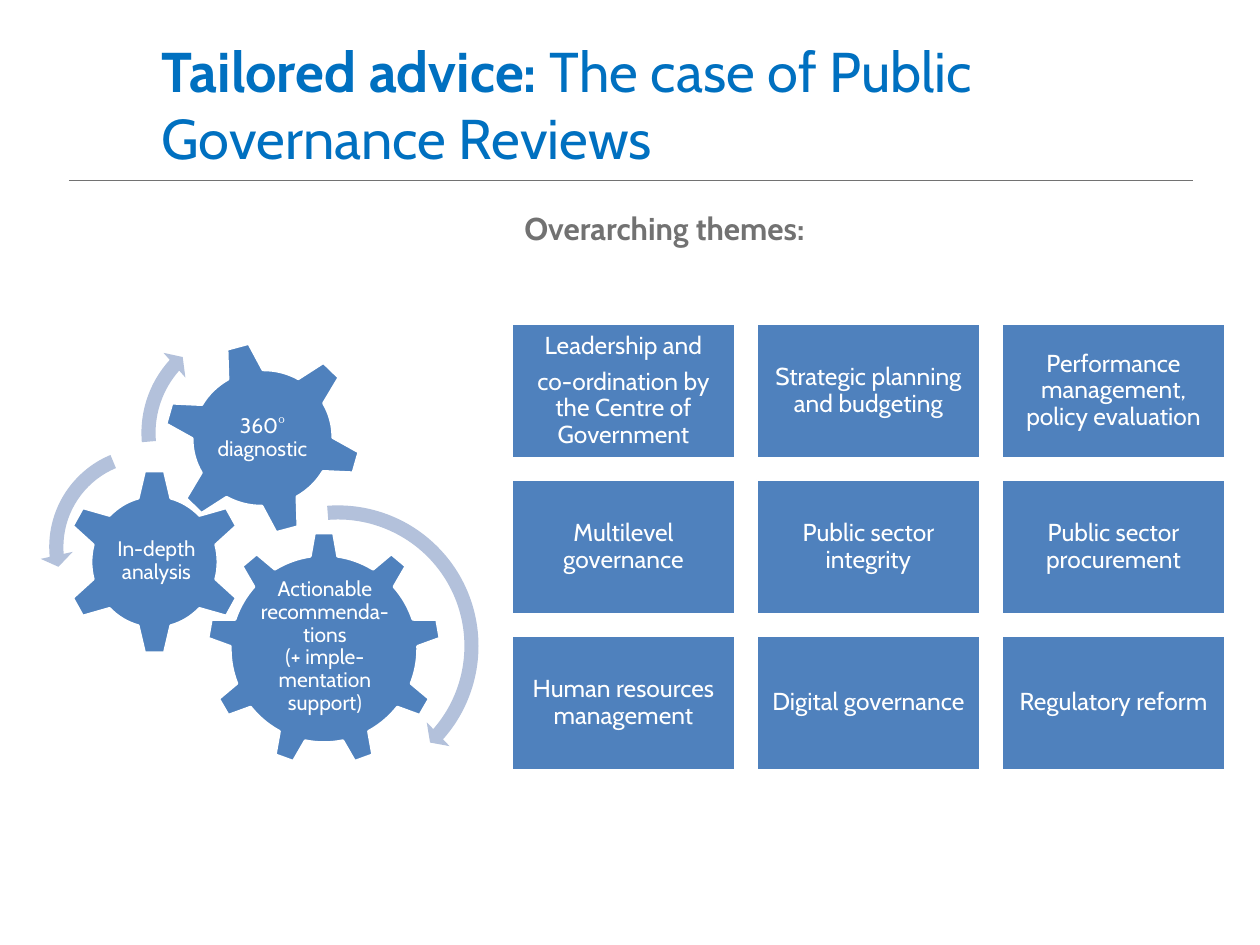
from lxml import etree
from pptx import Presentation, util as u
from pptx.dml.color import RGBColor
from pptx.enum import shapes, text
from pptx.oxml.ns import qn

COLORS = {
    "title": "0070C0",
    "grey": "727272",
    "blue": "4F81BD",
    "pale": "B3C1DB",
    "white": "FFFFFF",
}
FONT = "Cabin"
PRESET = shapes.MSO_SHAPE
THEMES = [
    "Leadership and\nco-ordination by the Centre of Government",
    "Strategic planning and budgeting",
    "Performance management, policy evaluation",
    "Multilevel governance",
    "Public sector integrity",
    "Public sector procurement",
    "Human resources management",
    "Digital governance",
    "Regulatory reform",
]
GEARS = [
    (PRESET.GEAR_9, (167, 217, 234, 234), 0, (215, 271, 140, 121),
     "Actionable recommenda-\vtions\v(+ imple- mentation support)"),
    (PRESET.GEAR_6, (24, 154, 181, 186), 0, (71, 200, 91, 92), "In-depth analysis"),
    (PRESET.GEAR_6, (123, 26, 199, 194), 345, (167, 68, 111, 110), "360° diagnostic"),
]
ARROWS = [
    (PRESET.CIRCULAR_ARROW, (148, 181, 300, 300), (0.047, 2.99, 24.827, 159.354, 0.055)),
    (PRESET.LEFT_CIRCULAR_ARROW, (0, 123, 218, 218), (0.065, 4.3, 104.891, 148.378, 0.075)),
    (PRESET.CIRCULAR_ARROW, (92, 0, 236, 236), (0.06, 3.941, 133.138, 105.082, 0.07)),
]


def px(length):
    """Turn pixels into EMU at 126 to the inch."""
    return u.Emu(round(length * 914400 / 126))


def place(box, left, top):
    """Return a box in EMU, moved by the corner of its region."""
    return [px(n) for n in (box[0] + left, box[1] + top, box[2], box[3])]


def color(name):
    """Look up a colour by name."""
    return RGBColor.from_string(COLORS[name])


def write(frame, words, size, ink="white", lead="", bold=False, align="CENTER",
          anchor="MIDDLE", inset=None, spacing=0.9):
    """Fill a text frame, one paragraph a line, after an optional bold lead."""
    frame.word_wrap = True
    frame.auto_size = text.MSO_AUTO_SIZE.NONE
    frame.vertical_anchor = getattr(text.MSO_ANCHOR, anchor)
    if inset is not None:
        frame.margin_left = frame.margin_right = px(inset)
        frame.margin_top = frame.margin_bottom = px(inset)
    for index, line in enumerate(words.split("\n")):
        paragraph = frame.add_paragraph() if index else frame.paragraphs[0]
        paragraph.text = lead or line
        if lead:
            paragraph.add_run().text = line
        paragraph.alignment = getattr(text.PP_ALIGN, align)
        paragraph.line_spacing = spacing
        paragraph.space_before = u.Pt(5 if index else 0)
        for number, run in enumerate(paragraph.runs):
            run.font.name = FONT
            run.font.size = u.Pt(size)
            run.font.bold = bold or bool(lead and number == 0)
            run.font.color.rgb = color(ink)
        for line_break in paragraph._p.findall(qn("a:br")):
            etree.SubElement(line_break, qn("a:rPr"), sz=str(size * 100))


def add_solid(slide, preset, box, fill, outlined=True):
    """Add a filled preset shape, with a white outline if asked."""
    solid = slide.shapes.add_shape(preset, *box)
    solid.shadow.inherit = False
    solid.fill.solid()
    solid.fill.fore_color.rgb = color(fill)
    if outlined:
        solid.line.color.rgb = color("white")
        solid.line.width = u.Pt(1.5)
    else:
        solid.line.fill.background()
    return solid


def add_header(slide, left, top, width, height):
    """Set the title and draw the rule below it."""
    title = slide.shapes.title
    title.left, title.top, title.width, title.height = place(
        (80, 0, width - 102, height - 6), left, top)
    write(title.text_frame, "The case of Public Governance Reviews", 32, ink="title",
          lead="Tailored advice: ", align="LEFT", spacing=1.0)
    rule_y = px(top + height)
    rule = slide.shapes.add_connector(
        shapes.MSO_CONNECTOR.STRAIGHT, px(left), rule_y, px(left + width), rule_y)
    rule.line.color.rgb = color("grey")
    rule.line.width = u.Pt(0.5)
    etree.SubElement(rule._element.spPr, qn("a:effectLst"))


def add_gears(slide, left, top):
    """Draw the three meshed gears and their turning arrows."""
    for preset, box, turn, label_box, label in GEARS:
        gear = add_solid(slide, preset, place(box, left, top), "blue")
        gear.rotation = turn
        caption = slide.shapes.add_textbox(*place(label_box, left, top))
        write(caption.text_frame, label, 12, inset=3)
    for preset, box, bends in ARROWS:
        arrow = add_solid(slide, preset, place(box, left, top), "pale", outlined=False)
        for index, bend in enumerate(bends):
            arrow.adjustments[index] = bend


def add_themes(slide, left, top, width, height):
    """Lay out the heading and a three by three grid of themes."""
    heading = slide.shapes.add_textbox(*place((0, 0, 556, 50), left, top))
    write(heading.text_frame, "Overarching themes:", 18, ink="grey", bold=True,
          align="LEFT", anchor="TOP", spacing=1.0)
    gap, grid_top = 22, 121
    tile_width = (width - 2 * gap) // 3
    tile_height = (height - grid_top - 2 * gap) // 3
    for index, theme in enumerate(THEMES):
        row, column = divmod(index, 3)
        box = (column * (tile_width + gap), grid_top + row * (tile_height + gap),
               tile_width, tile_height)
        tile = add_solid(slide, PRESET.RECTANGLE, place(box, left, top), "blue")
        write(tile.text_frame, theme, 14, inset=8)


def main():
    """Build and save the slide."""
    deck = Presentation()
    deck.slide_width, deck.slide_height = px(1260), px(945)
    slide = deck.slides.add_slide(deck.slide_layouts[5])
    add_header(slide, 69, 33, 1124, 147)
    add_gears(slide, 40, 315)
    add_themes(slide, 512, 203, 713, 567)
    deck.save("out.pptx")


if __name__ == "__main__":
    main()
